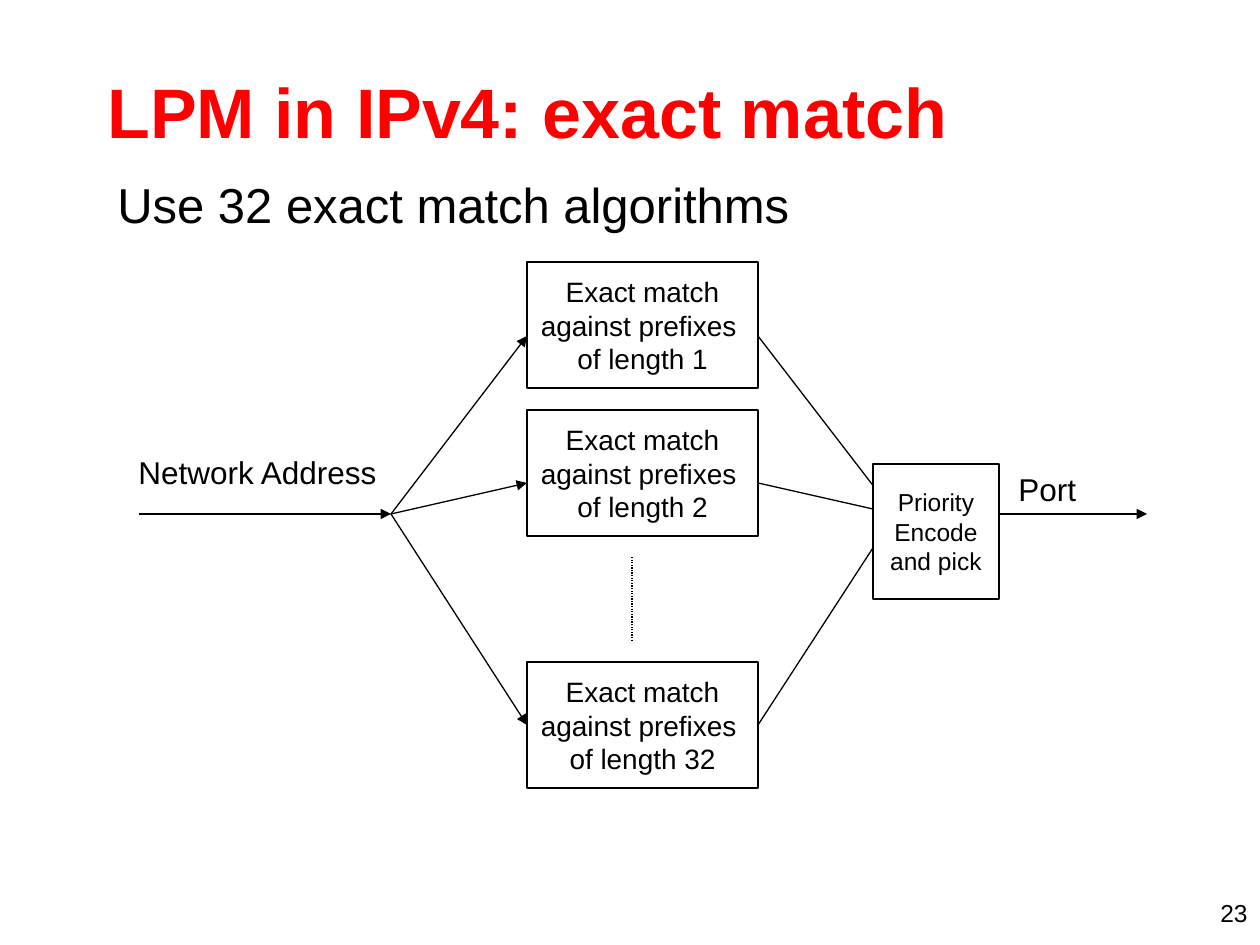
"""Build the slide on longest prefix matching by exact match."""
from lxml.etree import SubElement
from pptx import Presentation
from pptx.dml.color import RGBColor
from pptx.enum.dml import MSO_LINE as Dash
from pptx.enum.shapes import MSO_CONNECTOR as Link, MSO_SHAPE as Shape
from pptx.enum.text import MSO_ANCHOR as Anchor, PP_ALIGN as Align
from pptx.oxml.ns import qn
from pptx.util import Emu, Pt

BLACK = RGBColor(0, 0, 0)
WHITE = RGBColor(255, 255, 255)
RED = RGBColor(255, 0, 0)

TITLE = "LPM in IPv4: exact match"
LABELS = [
    ("23", (966, 892, 294, 32), 14, Align.RIGHT, True),
    ("Use 32 exact match algorithms", (105, 168, 1071, 567), 28, Align.LEFT, True),
    ("Network Address", (126, 447, 266, 50), 18, Align.LEFT, False),
    ("Port", (1006, 464, 83, 50), 18, Align.LEFT, False),
]
MATCH = "Exact match\nagainst prefixes \nof length {}"
STAGES = [(1, 262, 336), (2, 410, 483), (32, 662, 725)]
LEFT, WIDE, HIGH = 527, 231, 126
PICK = ("Priority\nEncode\nand pick", (873, 464, 126, 135), 14)
START, FORK, JOIN, END, MID = 139, 391, 895, 1147, 514
DOTS = (632, 557, 632, 640)


def px(*nums):
    return [Emu(round(n * 914400 / 126)) for n in nums]


def style(obj, **vals):
    for name, val in vals.items():
        setattr(obj, name, val)


def write(frame, text, size, align, color=BLACK, bold=False, **vals):
    style(frame, **vals)
    frame.text = text
    for para in frame.paragraphs:
        para.alignment = align
        style(para.font, name="Arial", size=Pt(size), bold=bold)
        para.font.color.rgb = color


def ink(line):
    line.color.rgb = BLACK
    line.width = Pt(0.75)


def label(text, area, size, align, wrap):
    box = slide.shapes.add_textbox(*px(*area))
    write(box.text_frame, text, size, align, word_wrap=wrap)
    return box


def block(text, area, size):
    box = slide.shapes.add_shape(Shape.RECTANGLE, *px(*area))
    box.shadow.inherit = False
    box.fill.solid()
    box.fill.fore_color.rgb = WHITE
    ink(box.line)
    write(box.text_frame, text, size, Align.CENTER,
          word_wrap=False, vertical_anchor=Anchor.MIDDLE)
    return box


def wire(ends, arrow=True):
    line = slide.shapes.add_connector(Link.STRAIGHT, *px(*ends))
    ink(line.line)
    SubElement(line._element.spPr, qn("a:effectLst"))
    if arrow:
        SubElement(line.line._get_or_add_ln(), qn("a:tailEnd"), type="triangle")
    return line


deck = Presentation()
style(deck, **dict(zip(("slide_width", "slide_height"), px(1260, 945))))
slide = deck.slides.add_slide(deck.slide_layouts[5])

head = slide.shapes.title
style(head, **dict(zip(("left", "top", "width", "height"), px(95, 32, 1071, 158))))
write(head.text_frame, TITLE, 40, Align.LEFT, RED, True, vertical_anchor=Anchor.MIDDLE)

for item in LABELS:
    label(*item).text_frame.paragraphs[0].space_before = Pt(3 if item[2] == 28 else 0)

for num, top, port in STAGES:
    box = block(MATCH.format(num), (LEFT, top, WIDE, HIGH), 16)
    into = wire((FORK, MID, LEFT, port))
    out = wire((LEFT + WIDE, port, JOIN, MID))
    if port == top + HIGH // 2:
        into.end_connect(box, 1)
        out.begin_connect(box, 3)

wire(DOTS, False).line.dash_style = Dash.ROUND_DOT
wire((START, MID, FORK, MID))
wire((JOIN, MID, END, MID))
block(*PICK)

deck.save("out.pptx")
